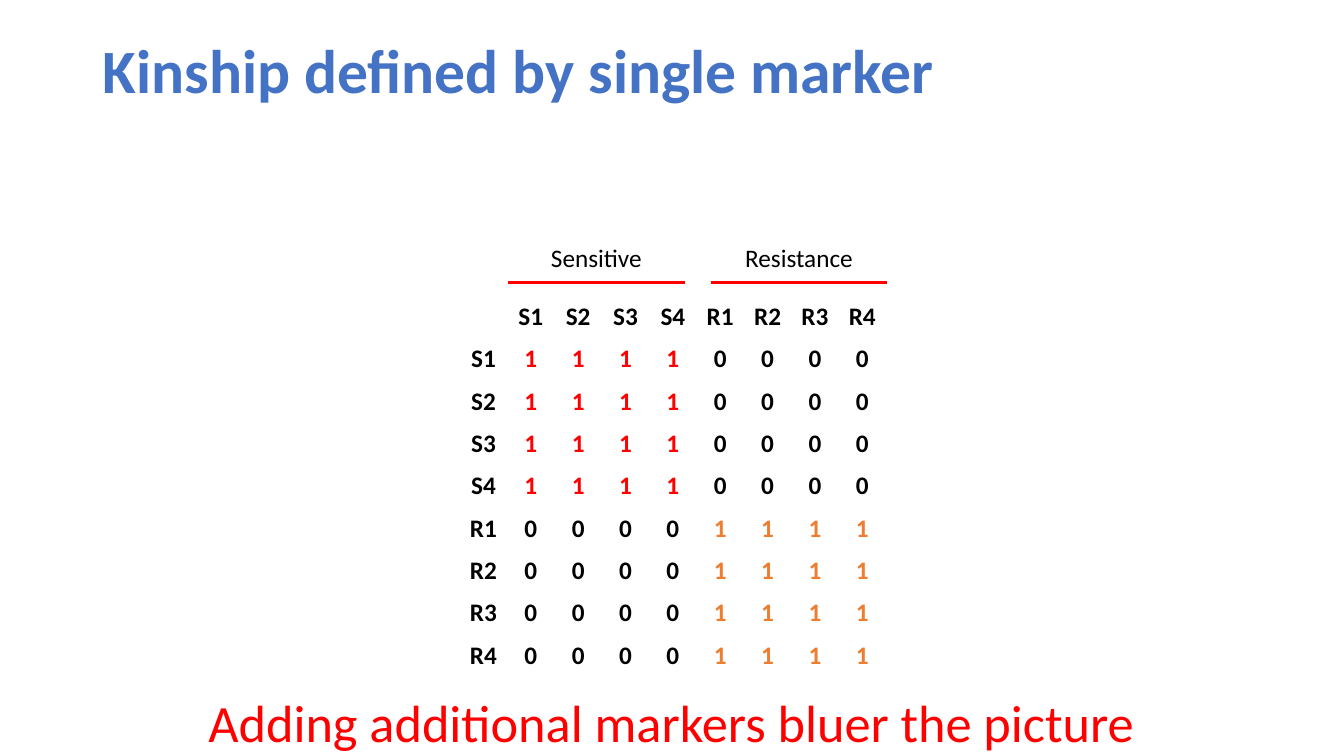
from lxml import etree
from pptx import Presentation
from pptx import util as u
from pptx.dml.color import RGBColor
from pptx.enum import shapes, text
from pptx.oxml import ns

WIDTH, HEIGHT = 13.33, 7.5
BLACK, RED, ORANGE, BLUE = "000000", "FF0000", "ED7D31", "4472C4"
GROUPS = [("Sensitive", "S", RED), ("Resistance", "R", ORANGE)]
GROUP_SIZE = 4
CELL_WIDTH, CELL_HEIGHT = 0.47, 0.42


def color(hex_value):
    return RGBColor.from_string(hex_value)


def inches(*lengths):
    return [u.Inches(length) for length in lengths]


def write(frame, words, hex_value, align=text.PP_ALIGN.CENTER, line_spacing=None, **font):
    """Put one formatted paragraph in a text frame."""
    para = frame.paragraphs[0]
    para.alignment = align
    para.line_spacing = line_spacing
    span = para.add_run()
    span.text = words
    span.font.color.rgb = color(hex_value)
    for name, value in {"name": "Calibri", "size": u.Pt(18), **font}.items():
        setattr(span.font, name, value)


def add_label(page, box, words, hex_value, anchor=text.MSO_ANCHOR.TOP, **font):
    frame = page.shapes.add_textbox(*inches(*box)).text_frame
    frame.word_wrap = True
    frame.vertical_anchor = anchor
    write(frame, words, hex_value, **font)


def add_title(page, box):
    title = page.shapes.title
    for name, value in zip(("left", "top", "width", "height"), inches(*box)):
        setattr(title, name, value)
    title.text_frame.vertical_anchor = text.MSO_ANCHOR.MIDDLE
    write(title.text_frame, "Kinship defined by single marker", BLUE,
          align=text.PP_ALIGN.LEFT, line_spacing=0.9, size=u.Pt(44), bold=True)


def add_group_heading(page, box, words):
    """Group name centred above a red rule along the bottom of the box."""
    left, top, width, height = box
    inset = 0.16
    add_label(page, (left + inset, top, width - 2 * inset, 0.4), words, BLACK)
    rule = page.shapes.add_connector(
        shapes.MSO_CONNECTOR.STRAIGHT,
        *inches(left + width, top + height, left, top + height))
    rule.line.color.rgb = color(RED)
    rule.line.width = u.Pt(2)
    etree.SubElement(rule._element.spPr, ns.qn("a:effectLst"))


def add_kinship_table(page, box):
    """Kinship is 1 within a group and 0 between groups."""
    members = [(f"{letter}{number}", letter, tint)
               for _, letter, tint in GROUPS
               for number in range(1, GROUP_SIZE + 1)]
    count = len(members) + 1
    table = page.shapes.add_table(count, count, *inches(*box)).table
    table.first_row = table.horz_banding = False
    for column in table.columns:
        column.width = u.Inches(box[2] / count)
    for row in table.rows:
        row.height = u.Inches(box[3] / count)

    # Cell frame, shared by every cell
    cell_format = {"vertical_anchor": text.MSO_ANCHOR.MIDDLE, "margin_bottom": 0}
    for side in ("left", "right", "top"):
        cell_format[f"margin_{side}"] = u.Inches(0.01)
    for cell in table.iter_cells():
        cell.fill.background()
        for name, value in cell_format.items():
            setattr(cell, name, value)

    # Names along both edges, then the values
    for i, (name, group, tint) in enumerate(members, 1):
        for place in ((0, i), (i, 0)):
            write(table.cell(*place).text_frame, name, BLACK, bold=True)
        for j, (_, other, _) in enumerate(members, 1):
            related = group == other
            write(table.cell(i, j).text_frame, "1" if related else "0",
                  tint if related else BLACK, bold=True)


def main():
    deck = Presentation()
    deck.slide_width, deck.slide_height = inches(WIDTH, HEIGHT)
    page = deck.slides.add_slide(deck.slide_layouts[5])

    add_title(page, (0.92, 0, 11.5, 1.45))
    cells = len(GROUPS) * GROUP_SIZE + 1
    add_kinship_table(page, (4.56, 2.93, cells * CELL_WIDTH, cells * CELL_HEIGHT))
    for index, (words, _, _) in enumerate(GROUPS):
        add_group_heading(page, (5.04 + index * 2.01, 2.36, 1.75, 0.44), words)

    # Closing remark, centred on the slide
    add_label(page, ((WIDTH - 10) / 2, 6.82, 10, 0.68),
              "Adding additional markers bluer the picture", RED,
              anchor=text.MSO_ANCHOR.MIDDLE, size=u.Pt(37.4))
    deck.save("out.pptx")


if __name__ == "__main__":
    main()
